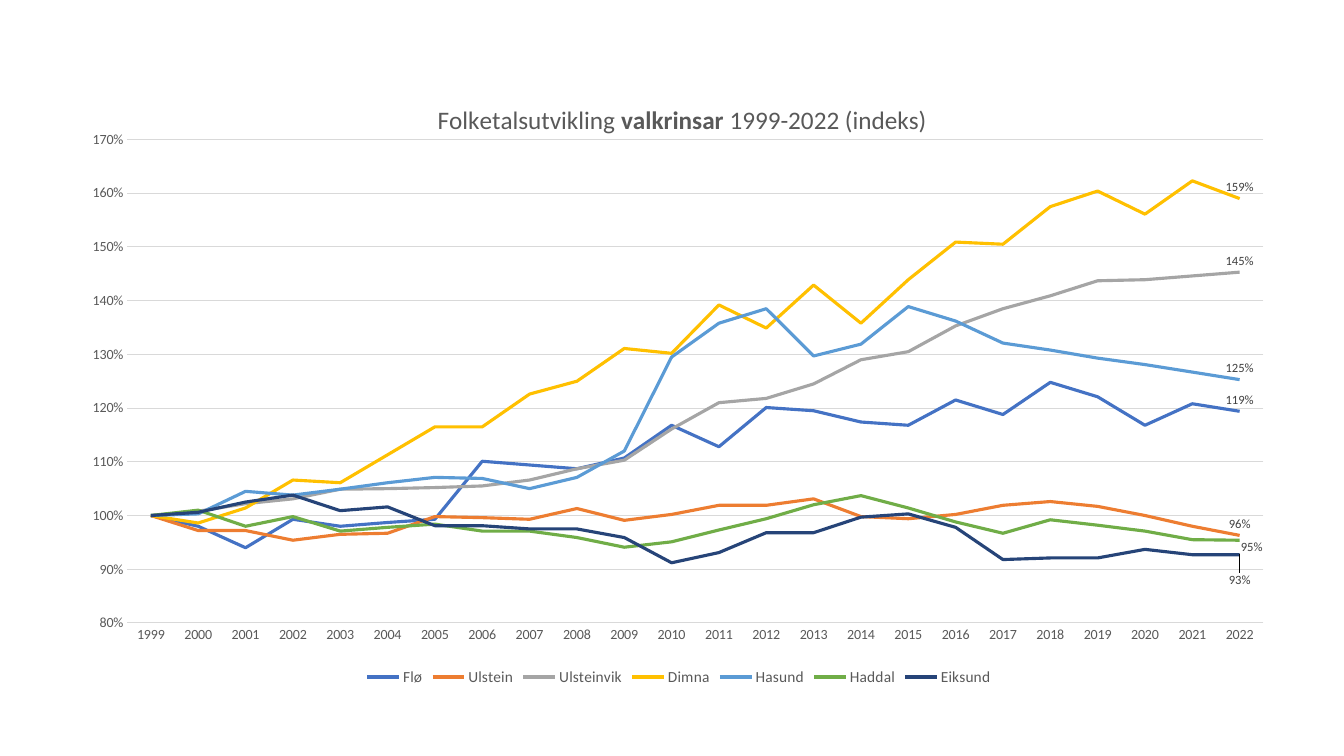
import pptx
import pptx.chart.data
import pptx.dml.color
import pptx.enum.chart
import pptx.oxml
import pptx.util
from pptx.util import Inches

THEME = {
    "font": "Calibri",
    "text": "595959",
    "label": "404040",
    "grid": "D9D9D9",
    "title_size": 18,
    "legend_size": 11,
    "axis_size": 10,
    "label_size": 9,
    "series_width": 2.25,
    "grid_width": 0.75,
}
NAMESPACE = 'xmlns:c="http://schemas.openxmlformats.org/drawingml/2006/chart"'
YEARS = range(1999, 2023)
DISTRICTS = {
    "Flø": ("4472C4", [
        1, 0.98, 0.94, 0.993, 0.98, 0.987, 0.993, 1.101, 1.094, 1.087, 1.107, 1.168,
        1.128, 1.201, 1.195, 1.174, 1.168, 1.215, 1.188, 1.248, 1.221, 1.168, 1.208, 1.194]),
    "Ulstein": ("ED7D31", [
        1, 0.972, 0.972, 0.954, 0.965, 0.967, 0.998, 0.996, 0.993, 1.013, 0.991, 1.002,
        1.019, 1.019, 1.031, 0.998, 0.994, 1.002, 1.019, 1.026, 1.017, 1, 0.98, 0.963]),
    "Ulsteinvik": ("A5A5A5", [
        1, 1.008, 1.022, 1.031, 1.049, 1.05, 1.052, 1.055, 1.066, 1.087, 1.103, 1.161,
        1.21, 1.218, 1.245, 1.29, 1.305, 1.353, 1.385, 1.409, 1.437, 1.439, 1.446, 1.453]),
    "Dimna": ("FFC000", [
        1, 0.986, 1.014, 1.066, 1.061, 1.113, 1.165, 1.165, 1.226, 1.25, 1.311, 1.302,
        1.392, 1.349, 1.429, 1.358, 1.439, 1.509, 1.505, 1.575, 1.604, 1.561, 1.623, 1.59]),
    "Hasund": ("5B9BD5", [
        1, 1.003, 1.045, 1.038, 1.049, 1.061, 1.071, 1.069, 1.05, 1.071, 1.12, 1.295,
        1.358, 1.385, 1.297, 1.319, 1.389, 1.362, 1.321, 1.308, 1.293, 1.281, 1.267, 1.253]),
    "Haddal": ("70AD47", [
        1, 1.01, 0.98, 0.998, 0.971, 0.978, 0.984, 0.971, 0.971, 0.959, 0.941, 0.951,
        0.973, 0.994, 1.02, 1.037, 1.014, 0.988, 0.967, 0.992, 0.982, 0.971, 0.955, 0.954]),
    "Eiksund": ("264478", [
        1, 1.006, 1.025, 1.038, 1.009, 1.016, 0.981, 0.981, 0.975, 0.975, 0.959, 0.912,
        0.931, 0.968, 0.968, 0.997, 1.003, 0.978, 0.918, 0.921, 0.921, 0.937, 0.927, 0.927]),
}
LABEL_SHIFTS = {"Haddal": {"x": 0.01, "y": 0.03}, "Eiksund": {"x": 0, "y": 0.06}}


def style(target, color, size, **values):
    target.color.rgb = pptx.dml.color.RGBColor.from_string(color)
    values["width" if hasattr(target, "width") else "size"] = pptx.util.Pt(size)
    if "size" in values:
        values["name"] = THEME["font"]
    for name, value in values.items():
        setattr(target, name, value)


def layout_xml(**places):
    tags = "".join(f'<c:{name} val="{value}"/>' for name, value in places.items())
    return pptx.oxml.parse_xml(
        f"<c:layout {NAMESPACE}><c:manualLayout>{tags}</c:manualLayout></c:layout>")


deck = pptx.Presentation()
deck.slide_width = Inches(13.33)
deck.slide_height = Inches(7.5)
page = deck.slides.add_slide(deck.slide_layouts[6])

data = pptx.chart.data.CategoryChartData(number_format="0%")
data.categories = [str(year) for year in YEARS]
for name, (color, values) in DISTRICTS.items():
    data.add_series(name, values)
chart = page.shapes.add_chart(
    pptx.enum.chart.XL_CHART_TYPE.LINE,
    Inches(0.76), Inches(0.77), Inches(11.95), Inches(6.08), data).chart
style(chart.font, THEME["text"], THEME["axis_size"])
chart.plots[0].vary_by_categories = False

chart.has_title = True
para = chart.chart_title.text_frame.paragraphs[0]
for text, bold in [("Folketalsutvikling ", False), ("valkrinsar", True), (" 1999-2022 (indeks)", False)]:
    span = para.add_run()
    span.text = text
    style(span.font, THEME["text"], THEME["title_size"], bold=bold)
chart.chart_title.include_in_layout = False
title_xml = chart.chart_title._element
for old in title_xml.xpath("c:layout"):
    title_xml.remove(old)
title_xml.xpath("c:tx")[0].addnext(layout_xml(xMode="edge", yMode="edge", x=0.297, y=0.037))

plot_xml = chart._chartSpace.chart.plotArea
for old in plot_xml.xpath("c:layout"):
    plot_xml.remove(old)
plot_xml.insert(0, layout_xml(
    layoutTarget="inner", xMode="edge", yMode="edge", x=0.042, y=0.101, w=0.943, h=0.789))

chart.has_legend = True
chart.legend.position = pptx.enum.chart.XL_LEGEND_POSITION.BOTTOM
chart.legend.include_in_layout = False
style(chart.legend.font, THEME["text"], THEME["legend_size"])

years_axis, index_axis = chart.category_axis, chart.value_axis
for axis in (years_axis, index_axis):
    axis.major_tick_mark = axis.minor_tick_mark = pptx.enum.chart.XL_TICK_MARK.NONE
    style(axis.tick_labels.font, THEME["text"], THEME["axis_size"])
style(years_axis.format.line, THEME["grid"], THEME["grid_width"])
years_axis.has_major_gridlines = False
for name, value in {"minimum_scale": 0.8, "maximum_scale": 1.7, "major_unit": 0.1,
                    "has_major_gridlines": True}.items():
    setattr(index_axis, name, value)
index_axis.tick_labels.number_format = "0%"
index_axis.tick_labels.number_format_is_linked = False
index_axis.format.line.fill.background()
style(index_axis.major_gridlines.format.line, THEME["grid"], THEME["grid_width"])

for series in chart.plots[0].series:
    series.smooth = False
    series.marker.style = pptx.enum.chart.XL_MARKER_STYLE.NONE
    style(series.format.line, DISTRICTS[series.name][0], THEME["series_width"])
    series.data_labels.show_value = False
    label = series.points[len(YEARS) - 1].data_label
    style(label.font, THEME["label"], THEME["label_size"])
    label.position = pptx.enum.chart.XL_LABEL_POSITION.ABOVE
    if series.name in LABEL_SHIFTS:
        labels_xml = series.data_labels._element
        labels_xml.xpath("c:dLbl/c:idx")[0].addnext(layout_xml(**LABEL_SHIFTS[series.name]))
        labels_xml.append(pptx.oxml.parse_xml(
            f'<c:extLst {NAMESPACE}><c:ext uri="{{CE6537A1-D6FC-4f65-9D91-7224C49458BB}}" '
            'xmlns:c15="http://schemas.microsoft.com/office/drawing/2012/chart">'
            '<c15:showLeaderLines val="1"/></c:ext></c:extLst>'))

deck.save("out.pptx")
